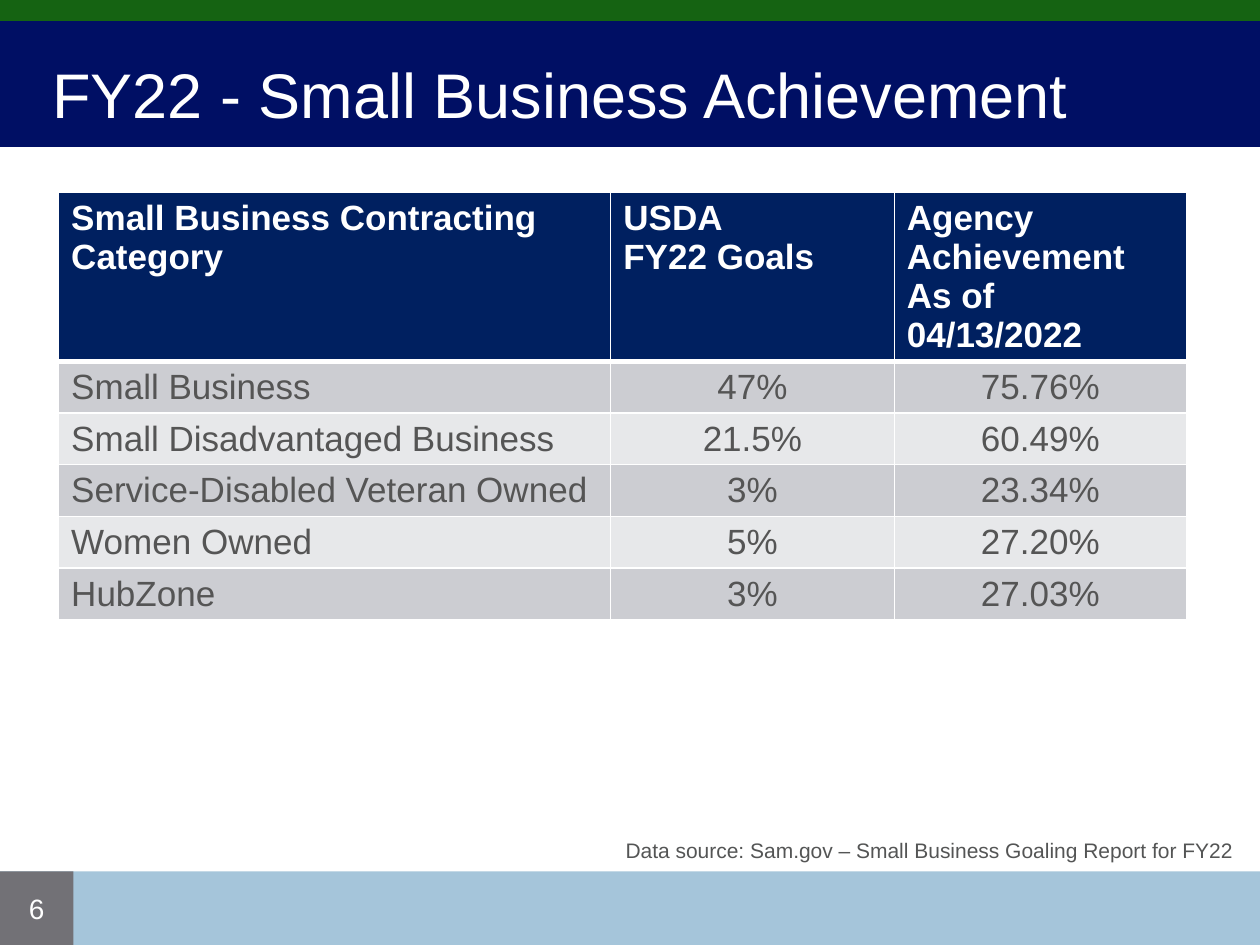
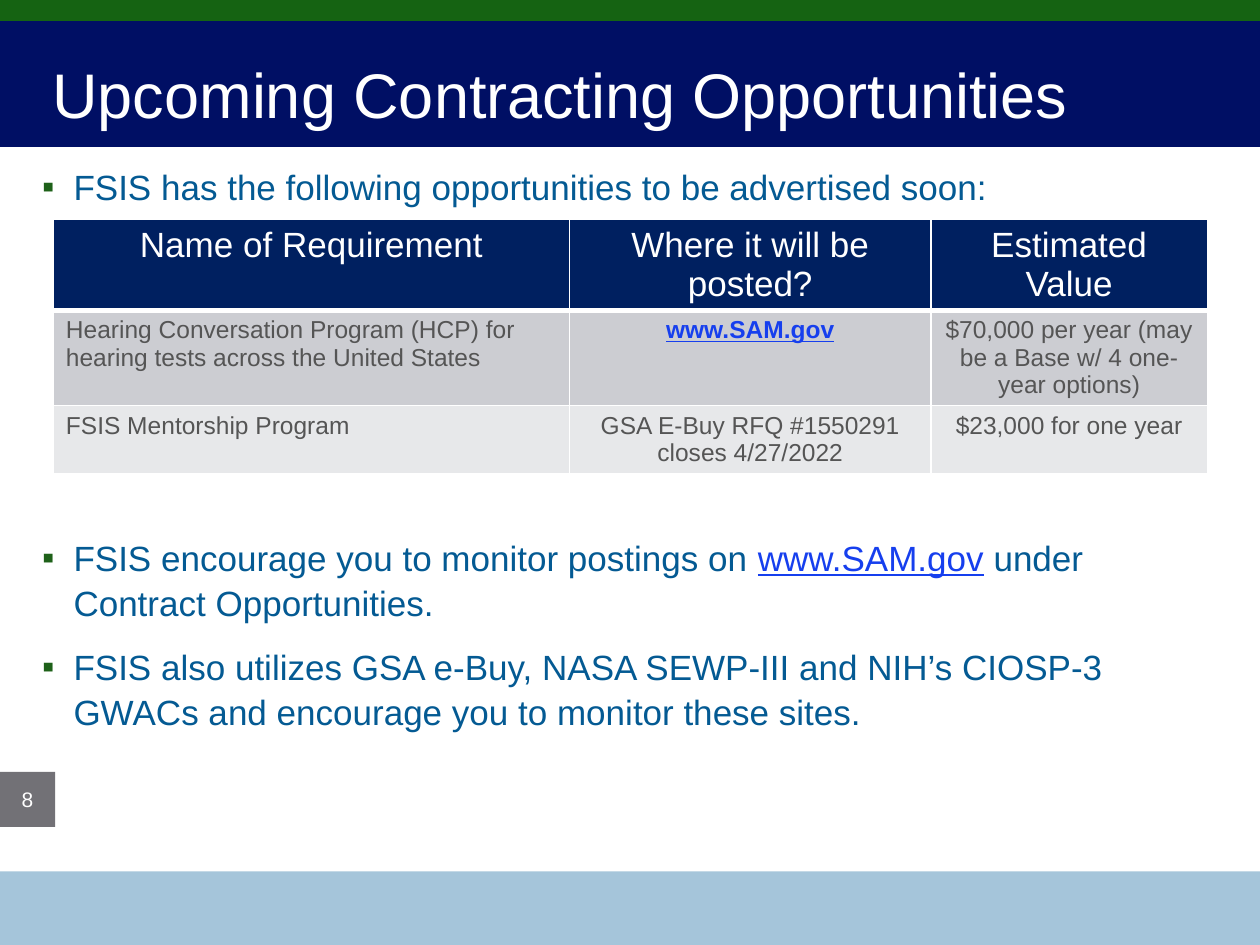
from dataclasses import dataclass

from lxml.etree import SubElement
from pptx import Presentation
from pptx.dml.color import RGBColor
from pptx.enum.shapes import MSO_SHAPE
from pptx.enum.text import MSO_ANCHOR, MSO_AUTO_SIZE, PP_ALIGN
from pptx.oxml.ns import qn
from pptx.shapes.autoshape import Shape
from pptx.slide import Slide
from pptx.table import _Cell
from pptx.text.text import _Paragraph
from pptx.util import Pt

FONT = "Arial"
WHITE = RGBColor(0xFF, 0xFF, 0xFF)
TITLE_NAVY = RGBColor(0x00, 0x0F, 0x64)
TOP_GREEN = RGBColor(0x15, 0x63, 0x12)
FOOTER_BLUE = RGBColor(0xA5, 0xC5, 0xDA)
NUMBER_GRAY = RGBColor(0x72, 0x71, 0x76)
HEADER_NAVY = RGBColor(0x00, 0x20, 0x60)
ROW_FILLS = (RGBColor(0xCC, 0xCD, 0xD2), RGBColor(0xE7, 0xE8, 0xEA))
CELL_GRAY = RGBColor(0x55, 0x55, 0x55)
SOURCE_GRAY = RGBColor(0x54, 0x55, 0x55)
BODY_BLUE = RGBColor(0x04, 0x5A, 0x93)
LINK_BLUE = RGBColor(0x16, 0x3F, 0xEE)
BULLET_GREEN = RGBColor(0x1E, 0x61, 0x19)
LINK_TEXT = "www.SAM.gov"
TITLE_ONLY, TITLE_AND_BODY = 5, 1


@dataclass(frozen=True)
class Box:
    """A place on the page, in points."""
    left: float
    top: float
    width: float
    height: float

    def lengths(self) -> tuple[Pt, Pt, Pt, Pt]:
        return Pt(self.left), Pt(self.top), Pt(self.width), Pt(self.height)


@dataclass(frozen=True)
class Band:
    box: Box
    color: RGBColor


@dataclass(frozen=True)
class TableSpec:
    left: float
    top: float
    widths: tuple[float, ...]
    heights: tuple[float, ...]
    rows: tuple[tuple[str, ...], ...]
    body_size: float
    header_bold: bool
    header_align: PP_ALIGN


@dataclass(frozen=True)
class Bullet:
    text: str
    space_before: float


BANDS = (
    Band(Box(0, 0, 720, 84), TITLE_NAVY),
    Band(Box(0, 498, 720, 42), FOOTER_BLUE),
    Band(Box(0, 0, 720, 12), TOP_GREEN),
)
TITLE_BOX = Box(30, 17.5, 654, 72)
BODY_BOX = Box(24, 89.5, 654, 375)

ACHIEVEMENT_TABLE = TableSpec(
    left=33.5, top=110,
    widths=(315.5, 162, 167),
    heights=(58.5,) + (29.5,) * 5,
    rows=(
        ("Small Business Contracting Category", "USDA\nFY22 Goals",
         "Agency Achievement\nAs of 04/13/2022"),
        ("Small Business", "47%", "75.76%"),
        ("Small Disadvantaged Business", "21.5%", "60.49%"),
        ("Service-Disabled Veteran Owned", "3%", "23.34%"),
        ("Women Owned", "5%", "27.20%"),
        ("HubZone", "3%", "27.03%"),
    ),
    body_size=20, header_bold=True, header_align=PP_ALIGN.LEFT,
)
OPPORTUNITY_TABLE = TableSpec(
    left=30.5, top=125.5,
    widths=(295, 206.5, 158),
    heights=(46, 47.5, 34),
    rows=(
        ("Name of Requirement", "Where it will be posted?", "Estimated Value"),
        ("Hearing Conversation Program (HCP) for hearing tests across the United States",
         LINK_TEXT, "$70,000 per year (may be a Base w/ 4 one-year options)"),
        ("FSIS Mentorship Program", "GSA E-Buy RFQ #1550291 closes 4/27/2022",
         "$23,000 for one year"),
    ),
    body_size=14, header_bold=False, header_align=PP_ALIGN.CENTER,
)
# The second bullet starts below the table
BULLETS = (
    Bullet("FSIS has the following opportunities to be advertised soon:", 0),
    Bullet(f"FSIS encourage you to monitor postings on {LINK_TEXT}"
           " under Contract Opportunities.", 179),
    Bullet("FSIS also utilizes GSA e-Buy, NASA SEWP-III and NIH’s CIOSP-3 GWACs"
           " and encourage you to monitor these sites.", 4),
)


def set_font(para: _Paragraph, size: float, color: RGBColor, bold: bool = False) -> None:
    para.font.name = FONT
    para.font.size = Pt(size)
    para.font.bold = bold
    para.font.color.rgb = color


def write_with_link(para: _Paragraph, text: str) -> None:
    """Write text, showing the web address in it as an underlined link."""
    before, link, after = text.partition(LINK_TEXT)
    for part in filter(None, (before, link, after)):
        span = para.add_run()
        span.text = part
        if part == LINK_TEXT:
            span.font.underline = True
            span.font.color.rgb = LINK_BLUE


def add_rectangle(page: Slide, box: Box, color: RGBColor) -> Shape:
    rectangle = page.shapes.add_shape(MSO_SHAPE.RECTANGLE, *box.lengths())
    rectangle.shadow.inherit = False
    rectangle.fill.solid()
    rectangle.fill.fore_color.rgb = color
    rectangle.line.fill.background()
    return rectangle


def place_placeholder(holder: Shape, box: Box) -> None:
    holder.left, holder.top, holder.width, holder.height = box.lengths()
    frame = holder.text_frame
    frame.word_wrap = True
    frame.auto_size = MSO_AUTO_SIZE.NONE
    frame.margin_left = frame.margin_right = 0
    frame.margin_top = frame.margin_bottom = Pt(3.6)


def add_page(deck: Presentation, layout: int, title: str) -> Slide:
    page = deck.slides.add_slide(deck.slide_layouts[layout])
    holder = page.shapes.title
    # Bands go behind the placeholders
    for band in BANDS:
        holder.element.addprevious(add_rectangle(page, band.box, band.color).element)
    place_placeholder(holder, TITLE_BOX)
    holder.text_frame.vertical_anchor = MSO_ANCHOR.MIDDLE
    holder.text_frame.text = title
    para = holder.text_frame.paragraphs[0]
    para.alignment = PP_ALIGN.LEFT
    set_font(para, 36, WHITE)
    return page


def add_page_number(page: Slide, number: int, top: float, side: float, size: float) -> None:
    frame = add_rectangle(page, Box(0, top, side, side), NUMBER_GRAY).text_frame
    frame.margin_left = frame.margin_right = Pt(5)
    frame.vertical_anchor = MSO_ANCHOR.MIDDLE
    frame.text = str(number)
    frame.paragraphs[0].alignment = PP_ALIGN.CENTER
    set_font(frame.paragraphs[0], size, WHITE)


def set_borders(cell: _Cell, bottom: float, top: float) -> None:
    properties = cell._tc.get_or_add_tcPr()
    sides = (("a:lnL", 1), ("a:lnR", 1), ("a:lnT", top), ("a:lnB", bottom))
    for index, (tag, width) in enumerate(sides):
        line = SubElement(properties, qn(tag), w=str(Pt(width)))
        fill = SubElement(line, qn("a:solidFill"))
        SubElement(fill, qn("a:srgbClr"), val=str(WHITE))
        properties.insert(index, line)


def add_table(page: Slide, spec: TableSpec) -> None:
    box = Box(spec.left, spec.top, sum(spec.widths), sum(spec.heights))
    table = page.shapes.add_table(len(spec.heights), len(spec.widths), *box.lengths()).table
    for column, width in zip(table.columns, spec.widths):
        column.width = Pt(width)
    for row, height in zip(table.rows, spec.heights):
        row.height = Pt(height)

    for row_index, texts in enumerate(spec.rows):
        is_header = row_index == 0
        for column_index, text in enumerate(texts):
            cell = table.cell(row_index, column_index)
            cell.fill.solid()
            cell.fill.fore_color.rgb = HEADER_NAVY if is_header else ROW_FILLS[(row_index - 1) % 2]
            set_borders(cell, bottom=3 if is_header else 1, top=3 if row_index == 1 else 1)
            if text == LINK_TEXT:
                write_with_link(cell.text_frame.paragraphs[0], text)
            else:
                cell.text_frame.text = text
            for para in cell.text_frame.paragraphs:
                if is_header:
                    para.alignment = spec.header_align
                    set_font(para, 20, WHITE, spec.header_bold)
                else:
                    para.alignment = PP_ALIGN.CENTER if column_index else PP_ALIGN.LEFT
                    set_font(para, spec.body_size, CELL_GRAY, text == LINK_TEXT)


def add_square_bullet(para: _Paragraph) -> None:
    properties = para._p.get_or_add_pPr()
    properties.set("marL", str(Pt(18)))
    properties.set("indent", str(Pt(-18)))
    color = SubElement(properties, qn("a:buClr"))
    SubElement(color, qn("a:srgbClr"), val=str(BULLET_GREEN))
    SubElement(properties, qn("a:buFont"), typeface=FONT)
    SubElement(properties, qn("a:buChar"), char="▪")


def fill_body(page: Slide, bullets: tuple[Bullet, ...]) -> None:
    holder = page.placeholders[1]
    place_placeholder(holder, BODY_BOX)
    frame = holder.text_frame
    for index, bullet in enumerate(bullets):
        para = frame.add_paragraph() if index else frame.paragraphs[0]
        add_square_bullet(para)
        para.line_spacing = 1.07
        para.space_before = Pt(bullet.space_before)
        para.space_after = Pt(7)
        set_font(para, 20, BODY_BLUE)
        write_with_link(para, bullet.text)


def add_source_note(page: Slide, text: str) -> None:
    frame = page.shapes.add_textbox(*Box(103.5, 475, 608.5, 22).lengths()).text_frame
    frame.word_wrap = True
    frame.text = text
    frame.paragraphs[0].alignment = PP_ALIGN.RIGHT
    set_font(frame.paragraphs[0], 12, SOURCE_GRAY)


def main() -> None:
    deck = Presentation()
    deck.slide_width, deck.slide_height = Pt(720), Pt(540)

    # Achievement against goals
    page = add_page(deck, TITLE_ONLY, "FY22 - Small Business Achievement")
    add_table(page, ACHIEVEMENT_TABLE)
    add_page_number(page, 6, top=498, side=42, size=16)
    add_source_note(page, "Data source: Sam.gov – Small Business Goaling Report for FY22")

    # Upcoming opportunities
    page = add_page(deck, TITLE_AND_BODY, "Upcoming Contracting Opportunities")
    add_page_number(page, 8, top=441, side=31.5, size=12)
    fill_body(page, BULLETS)
    add_table(page, OPPORTUNITY_TABLE)

    deck.save("out.pptx")


if __name__ == "__main__":
    main()
